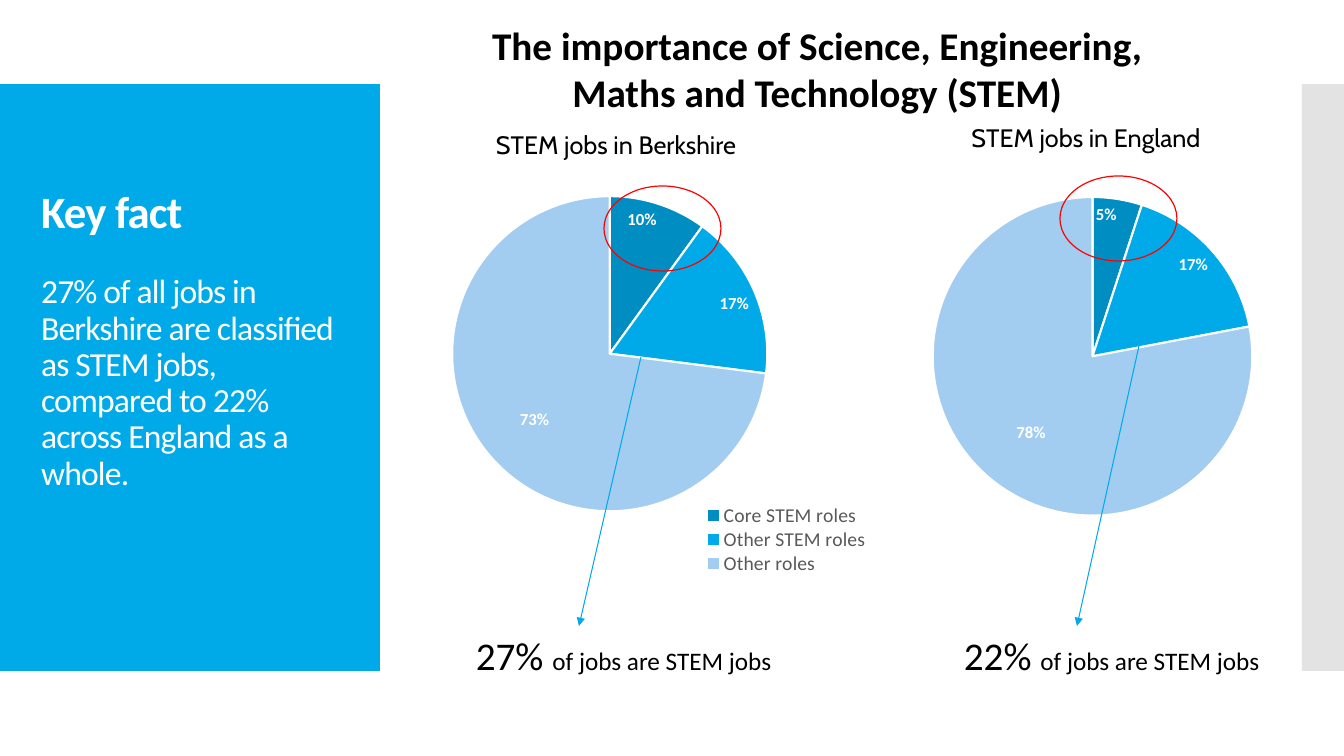
"""Build the STEM jobs slide with two pie charts and a key fact panel."""
from lxml import etree
from pptx import Presentation
from pptx.chart.data import CategoryChartData
from pptx.dml.color import RGBColor
from pptx.enum.chart import XL_CHART_TYPE as CT, XL_LABEL_POSITION as LP, XL_LEGEND_POSITION as LEG
from pptx.enum.shapes import MSO_CONNECTOR as CONN, MSO_SHAPE as SHAPE
from pptx.enum.text import MSO_ANCHOR as ANCHOR, MSO_AUTO_SIZE as AUTO, PP_ALIGN as ALIGN
from pptx.oxml.ns import qn
from pptx.util import Emu, Pt

COLORS = {"core": "008DC1", "other": "00AAE9", "rest": "A2CDF1", "white": "FFFFFF",
          "black": "000000", "grey": "C8C8C8", "legend": "595959", "ring": "FF0000"}
HEADING = ["The importance of Science, Engineering,", "Maths and Technology (STEM)"]
KEY_FACT = [("Key fact", 32, True),
            ("27% of all jobs in Berkshire are classified as STEM jobs, "
             "compared to 22% across England as a whole.", 24, False)]
ROLES = ["Core STEM roles", "Other STEM roles", "Other roles"]
SLICES = ["core", "other", "rest"]
BANDS = [((0, 84, 380, 587), "other", 100), ((1302, 84, 42, 587), "grey", 50)]
AREAS = [
    {"title": "STEM jobs in Berkshire", "title_at": (447, 124, 338, 40),
     "values": (10, 17, 73), "chart_at": (409, 176, 478, 404),
     "plot": (0.08, 0.05, 0.68, 0.78), "shift": (0.05, -0.06),
     "legend": (0.6, 0.81, 0.38, 0.18),
     "ring_at": (604, 186, 117, 85), "arrow": (647 - 6, 357, 579, 626),
     "share": "27% ", "share_at": (466, 626, 332, 57)},
    {"title": "STEM jobs in England", "title_at": (917, 117, 338, 40),
     "values": (5, 17, 78), "chart_at": (784, 196, 551, 323),
     "plot": (0.27, 0, 0.58, 0.99), "shift": (0.04, -0.1),
     "legend": None,
     "ring_at": (1060, 176, 117, 85), "arrow": (1139, 346, 1077, 626),
     "share": "22% ", "share_at": (954, 626, 332, 57)},
]
SHARE_NOTE = "of jobs are STEM jobs"


def px(*lengths):
    """Turn px into EMU."""
    return [Emu(round(v * 914400 / 100.8)) for v in lengths]


def rgb(name):
    """Look up a colour."""
    return RGBColor.from_string(COLORS[name])


def style(font, size, color="black", bold=False, name="Calibri"):
    """Format a font."""
    font.size, font.bold, font.name = Pt(size), bold, name
    font.color.rgb = rgb(color)


def add_text(s, at, lines, align=ALIGN.CENTER):
    """Add a text box; each line is a list of (text, size, bold, font) runs."""
    tf = s.shapes.add_textbox(*px(*at)).text_frame
    tf.word_wrap = True
    tf.auto_size = AUTO.SHAPE_TO_FIT_TEXT
    for i, runs in enumerate(lines):
        p = tf.paragraphs[0] if i == 0 else tf.add_paragraph()
        p.alignment = align
        for text, size, bold, font in runs:
            r = p.add_run()
            r.text = text
            style(r.font, size, "black", bold, font)


def set_layout(parent, index, inner=False, **lengths):
    """Give a chart part a manual layout."""
    for old in parent.findall(qn("c:layout")):
        parent.remove(old)
    layout = etree.Element(qn("c:layout"))
    manual = etree.SubElement(layout, qn("c:manualLayout"))
    if inner:
        etree.SubElement(manual, qn("c:layoutTarget")).set("val", "inner")
    if "w" in lengths:
        for mode in ("xMode", "yMode"):
            etree.SubElement(manual, qn(f"c:{mode}")).set("val", "edge")
    for key, value in lengths.items():
        etree.SubElement(manual, qn(f"c:{key}")).set("val", str(value))
    parent.insert(index, layout)


def add_pie(s, area):
    """Add the pie chart of one area."""
    data = CategoryChartData()
    data.categories = ROLES
    data.add_series("Share of jobs", area["values"])
    chart = s.shapes.add_chart(CT.PIE, *px(*area["chart_at"]), data).chart
    chart.has_title = False
    style(chart.font, 10)
    plot = chart.plots[0]
    plot.vary_by_categories = True
    series = plot.series[0]
    for i, color in enumerate(SLICES):
        fmt = series.points[i].format
        fmt.fill.solid()
        fmt.fill.fore_color.rgb = rgb(color)
        fmt.line.color.rgb = rgb("white")
        fmt.line.width = Pt(1.5)

    last = series.points[2].data_label
    style(last.font, 12, "white", True)
    last.position = LP.INSIDE_END
    labels = series.data_labels
    style(labels.font, 12, "white", True)
    labels.position = LP.INSIDE_END
    labels.show_percentage, labels.show_value = True, False
    labels.number_format, labels.number_format_is_linked = "0%", False
    label = labels._element.find(qn("c:dLbl"))
    label.find(qn("c:showVal")).set("val", "0")
    label.find(qn("c:showPercent")).set("val", "1")
    set_layout(label, 1, **dict(zip("xy", area["shift"])))

    plot_area = chart.element.find(".//" + qn("c:plotArea"))
    set_layout(plot_area, 0, True, **dict(zip("xywh", area["plot"])))
    chart.has_legend = area["legend"] is not None
    if chart.has_legend:
        legend = chart.legend
        legend.position, legend.include_in_layout = LEG.RIGHT, False
        style(legend.font, 14, "legend")
        set_layout(chart.element.find(".//" + qn("c:legend")), 1,
                   **dict(zip("xywh", area["legend"])))


def add_ring(s, at):
    """Circle the core roles slice."""
    ring = s.shapes.add_shape(SHAPE.OVAL, *px(*at))
    ring.shadow.inherit = False
    ring.fill.background()
    ring.line.color.rgb = rgb("ring")
    ring.line.width = Pt(0.85)


def add_arrow(s, ends):
    """Add an arrow from a pie to its share."""
    arrow = s.shapes.add_connector(CONN.STRAIGHT, *px(*ends))
    arrow.line.color.rgb = rgb("other")
    arrow.line.width = Pt(0.75)
    etree.SubElement(arrow.line._get_or_add_ln(), qn("a:tailEnd")).set("type", "triangle")
    etree.SubElement(arrow.element.spPr, qn("a:effectLst"))


def add_key_fact(s):
    """Fill the title and put the side bands behind it."""
    title = s.shapes.title
    title.left, title.top, title.width, title.height = px(31, 142, 325, 507)
    tf = title.text_frame
    tf.word_wrap, tf.auto_size = True, AUTO.NONE
    tf.vertical_anchor = ANCHOR.TOP
    tf.margin_top = px(48)[0]
    tf.text = "\n".join(text for text, _, _ in KEY_FACT)
    for p, (_, size, bold) in zip(tf.paragraphs, KEY_FACT):
        p.alignment, p.line_spacing = ALIGN.LEFT, 0.9
        p.space_before = Pt(0 if bold else 26)
        r = p.runs[0]
        style(r.font, size, "white", bold)
        r.font._element.set("spc", "-60")
    for at, color, opacity in BANDS:
        band = s.shapes.add_shape(SHAPE.RECTANGLE, *px(*at))
        band.shadow.inherit = False
        band.fill.solid()
        band.fill.fore_color.rgb = rgb(color)
        band.line.fill.background()
        if opacity < 100:
            tint = band.element.spPr.find(".//" + qn("a:srgbClr"))
            etree.SubElement(tint, qn("a:alpha")).set("val", str(opacity * 1000))
        title.element.addprevious(band.element)


def main():
    """Build and save the slide."""
    prs = Presentation()
    prs.slide_width, prs.slide_height = px(1344, 756)
    s = prs.slides.add_slide(prs.slide_layouts[5])
    add_key_fact(s)
    for area in AREAS:
        add_pie(s, area)
    for area in AREAS:
        add_text(s, area["title_at"], [[(area["title"], 18, False, "Cabin")]])
        add_ring(s, area["ring_at"])
        add_text(s, area["share_at"], [[(area["share"], 28, False, "Calibri"),
                                        (SHARE_NOTE, 18, False, "Calibri")]], ALIGN.LEFT)
        add_arrow(s, area["arrow"])
    add_text(s, (379, 16, 876, 105), [[(line, 28, True, "Calibri")] for line in HEADING])
    prs.save("out.pptx")


if __name__ == "__main__":
    main()
